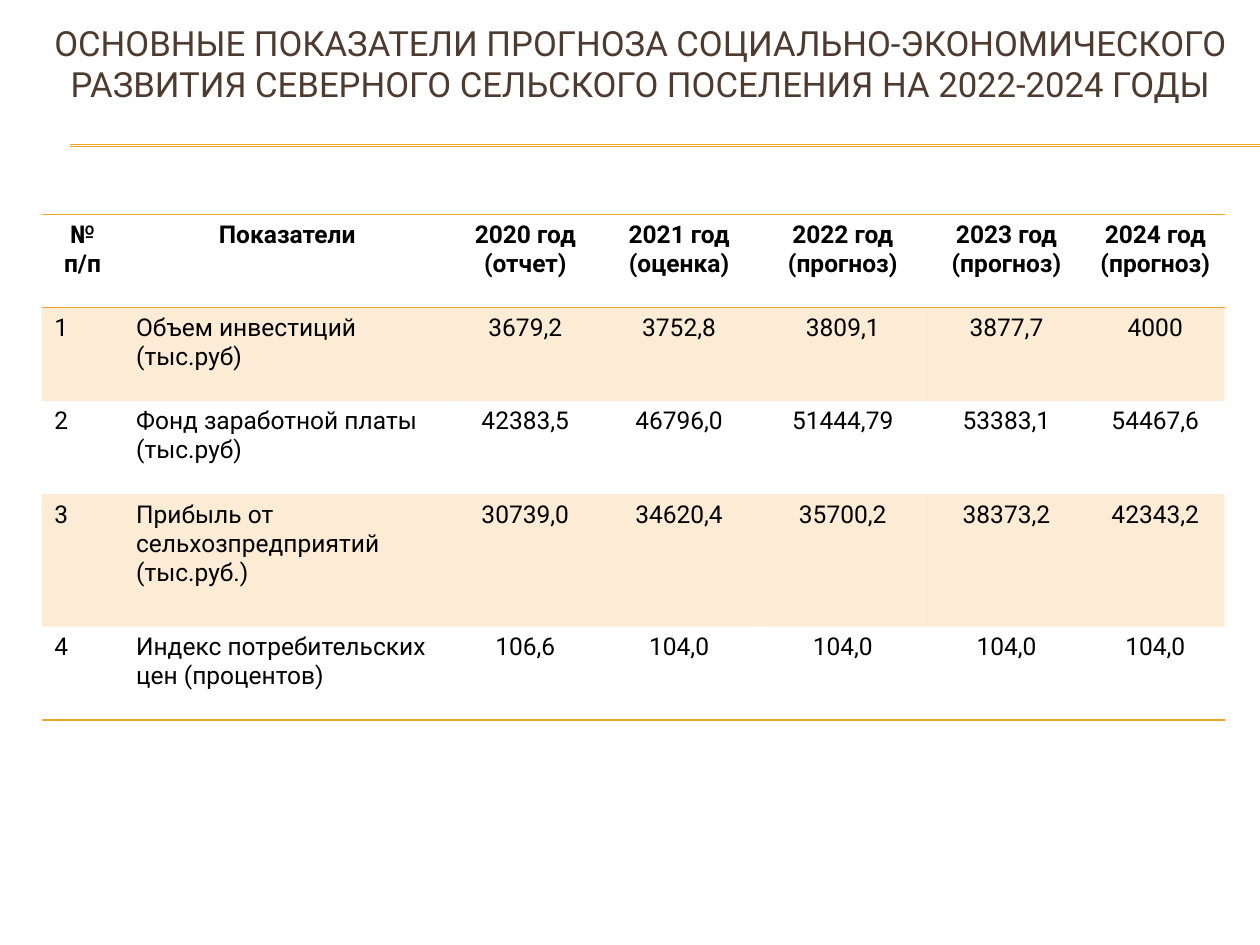
"""Build a slide with a table of socio-economic forecast indicators."""
from dataclasses import dataclass

from lxml import etree
from pptx import Presentation
from pptx import util as u
from pptx.dml.color import RGBColor
from pptx.enum import shapes, text
from pptx.oxml.ns import qn

COLORS = {"gold": "F0A22E", "brown": "4E3B30", "black": "000000"}
FONT = "Roboto"
NO_GRID_STYLE = "{2D5ABB26-0587-4C30-8999-92F81FD0307C}"
COLUMN_WIDTHS = (1.65, 6.6, 3, 3.2, 3.4, 3.2, 2.8)
ROW_HEIGHT = 1.88
TITLE = ("ОСНОВНЫЕ ПОКАЗАТЕЛИ ПРОГНОЗА СОЦИАЛЬНО-ЭКОНОМИЧЕСКОГО "
         "РАЗВИТИЯ СЕВЕРНОГО СЕЛЬСКОГО ПОСЕЛЕНИЯ НА 2022-2024 ГОДЫ")


@dataclass
class Row:
    cells: tuple[str, ...]
    height: float = ROW_HEIGHT
    header: bool = False
    shaded: bool = False
    borders: tuple[str, ...] = ()


ROWS = (
    Row(("№ п/п", "Показатели", "2020 год (отчет)", "2021 год (оценка)",
         *(f"{year} год\n(прогноз)" for year in (2022, 2023, 2024))),
        header=True, borders=("lnT", "lnB")),
    Row(("1", "Объем инвестиций (тыс.руб)",
         "3679,2", "3752,8", "3809,1", "3877,7", "4000"), shaded=True),
    Row(("2", "Фонд заработной платы (тыс.руб)",
         "42383,5", "46796,0", "51444,79", "53383,1", "54467,6")),
    Row(("3", "Прибыль от сельхозпредприятий (тыс.руб.)",
         "30739,0", "34620,4", "35700,2", "38373,2", "42343,2"),
        height=2.67, shaded=True),
    Row(("4", "Индекс потребительских цен (процентов)",
         "106,6", "104,0", "104,0", "104,0", "104,0"), borders=("lnB",)),
)


def rgb(name: str) -> RGBColor:
    return RGBColor.from_string(COLORS[name])


def write(tf, content: str, *, size: float, color: str = "black",
          bold: bool = False, centered: bool = True) -> None:
    tf.text = content
    for p in tf.paragraphs:
        p.alignment = text.PP_ALIGN.CENTER if centered else text.PP_ALIGN.LEFT
        for r in p.runs:
            r.font.name = FONT
            r.font.size = u.Pt(size)
            r.font.bold = bold
            r.font.color.rgb = rgb(color)


def add_title(s) -> None:
    sp = s.shapes.title
    sp.left, sp.top, sp.width, sp.height = map(u.Cm, (0.84, 0.91, 24.13, 2.01))
    tf = sp.text_frame
    tf.word_wrap = True
    tf.auto_size = text.MSO_AUTO_SIZE.NONE
    tf.vertical_anchor = text.MSO_ANCHOR.MIDDLE
    tf.margin_left = tf.margin_right = tf.margin_top = u.Cm(0.13)
    tf.margin_bottom = u.Cm(1.42)
    write(tf, TITLE, size=19.8, color="brown")


def add_rule(s, y: float) -> None:
    line = s.shapes.add_connector(shapes.MSO_CONNECTOR.STRAIGHT,
                                  u.Cm(1.42), u.Cm(y), u.Cm(25.4), u.Cm(y))
    line.line.color.rgb = rgb("gold")
    line.line.width = u.Pt(0.75)
    etree.SubElement(line._element.spPr, qn("a:effectLst"))


def shade(cell) -> None:
    cell.fill.solid()
    cell.fill.fore_color.rgb = rgb("gold")
    color = cell._tc.tcPr.find(f".//{qn('a:srgbClr')}")
    etree.SubElement(color, qn("a:alpha"), val="20000")


def add_border(cell, side: str) -> None:
    ln = etree.Element(qn(f"a:{side}"), w=str(u.Pt(1)))
    fill = etree.SubElement(ln, qn("a:solidFill"))
    etree.SubElement(fill, qn("a:srgbClr"), val=COLORS["gold"])
    cell._tc.get_or_add_tcPr().insert(0, ln)


def fill_row(table, index: int, row: Row) -> None:
    table.rows[index].height = u.Cm(row.height)
    for column, content in enumerate(row.cells):
        cell = table.cell(index, column)
        write(cell.text_frame, content, size=14, bold=row.header,
              centered=row.header or column > 1)
        if row.shaded:
            shade(cell)
        else:
            cell.fill.background()
        for side in reversed(row.borders):
            add_border(cell, side)


def add_indicators(s) -> None:
    frame = s.shapes.add_table(
        len(ROWS), len(COLUMN_WIDTHS), u.Cm(0.84), u.Cm(4.32),
        u.Cm(sum(COLUMN_WIDTHS)), u.Cm(sum(row.height for row in ROWS)))
    table = frame.table
    table.horz_banding = False
    table._tbl.tblPr.find(qn("a:tableStyleId")).text = NO_GRID_STYLE
    for column, width in zip(table.columns, COLUMN_WIDTHS):
        column.width = u.Cm(width)
    for index, row in enumerate(ROWS):
        fill_row(table, index, row)


def main() -> None:
    prs = Presentation()
    prs.slide_width, prs.slide_height = u.Cm(25.4), u.Cm(19.05)
    s = prs.slides.add_slide(prs.slide_layouts.get_by_name("Title Only"))
    for y in (2.92, 2.95):
        add_rule(s, y)
    add_title(s)
    add_indicators(s)
    prs.save("out.pptx")


if __name__ == "__main__":
    main()
